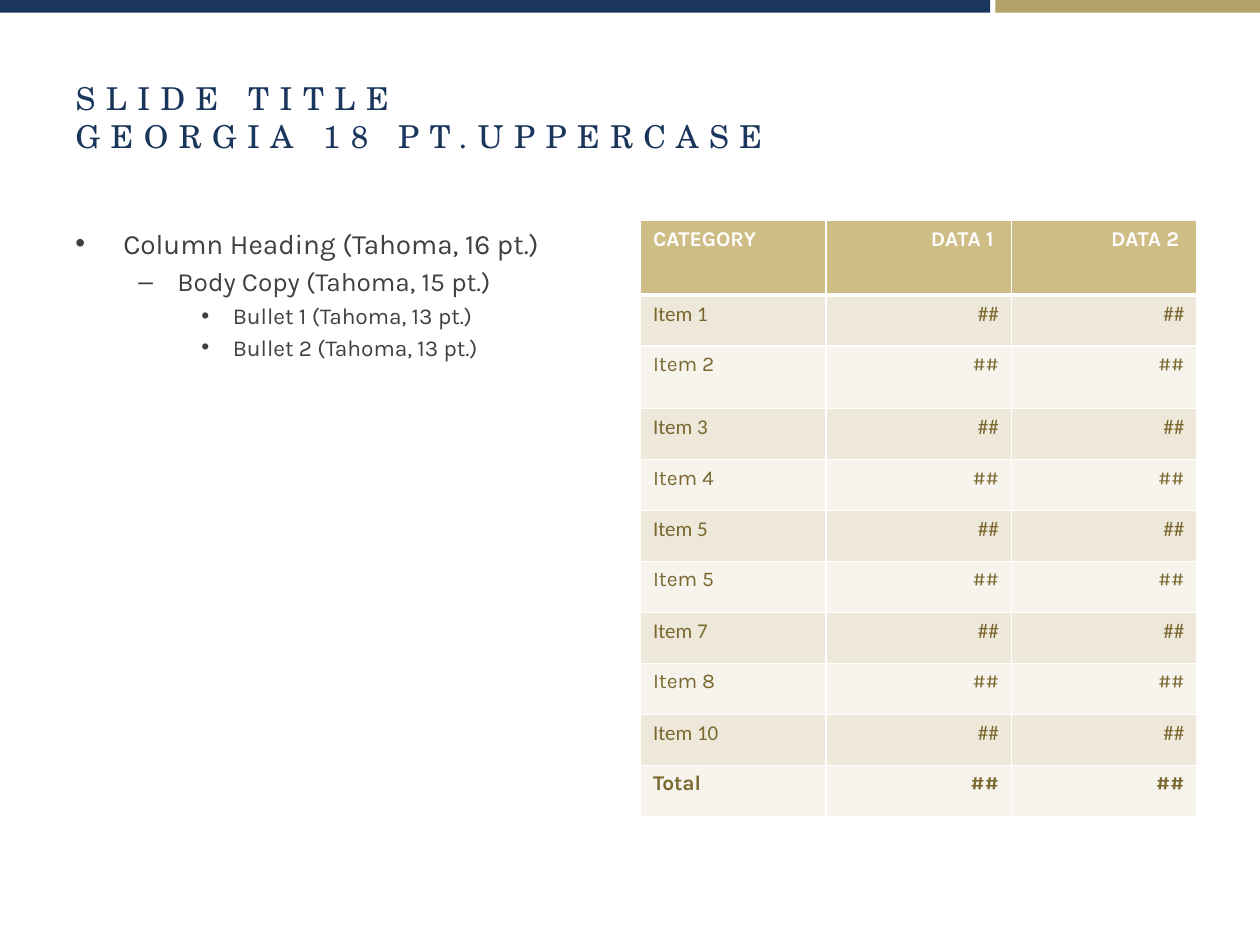
from pptx import Presentation
from pptx.dml.color import RGBColor
from pptx.enum.shapes import MSO_SHAPE as Shape
from pptx.enum.text import MSO_ANCHOR as Anchor, MSO_AUTO_SIZE as Fit, PP_ALIGN as Align
from pptx.oxml.ns import qn
from pptx.util import Inches, Pt
from lxml.etree import SubElement as Sub

NAVY, GOLD, WHITE = "1A365D", "B3A369", "FFFFFF"
GRAY, BROWN = "404040", "7A6830"
SAND, BANDS = "CFBD86", ("EDE8D9", "F6F4ED")
SANS, PLAIN, SERIF = "Karla", "Calibri", "TeX Gyre Schola"


def tint(code):
    return RGBColor.from_string(code)


class Deck:
    def __init__(self):
        self.file = Presentation()
        self.file.slide_width, self.file.slide_height = Inches(10), Inches(7.5)
        self.slide = self.file.slides.add_slide(self.file.slide_layouts[5])

    def wide(self, share):
        return round(self.file.slide_width * share / 100)

    def high(self, share):
        return round(self.file.slide_height * share / 100)

    def box(self, x, y, w, h):
        return self.wide(x), self.high(y), self.wide(w), self.high(h)

    def style(self, para, size, color, face=SANS, bold=False):
        for run in para.runs:
            font = run.font
            font.size, font.name, font.bold = Pt(size), face, bold
            font.color.rgb = tint(color)

    def bar(self, x, w, color):
        shape = self.slide.shapes.add_shape(Shape.RECTANGLE, *self.box(x, 0, w, 1.33))
        shape.shadow.inherit = False
        shape.fill.solid()
        shape.fill.fore_color.rgb = tint(color)
        shape.line.fill.background()

    def title(self, text, *area):
        shape = self.slide.shapes.title
        shape.left, shape.top, shape.width, shape.height = self.box(*area)
        frame = shape.text_frame
        frame.text = text
        frame.auto_size, frame.vertical_anchor = Fit.NONE, Anchor.MIDDLE
        para = frame.paragraphs[0]
        para.alignment = Align.LEFT
        self.style(para, 18, NAVY, SERIF)
        for run in para.runs:
            run.font._element.set("spc", "600")

    def bullets(self, items, *area):
        frame = self.slide.shapes.add_textbox(*self.box(*area)).text_frame
        frame.word_wrap = True
        frame.text = "\n".join(text for text, *rest in items)
        looks = {0: (0.38, 0.38, "•", 16), 1: (0.81, 0.31, "–", 15), 2: (1.25, 0.25, "•", 13)}
        for i, (para, (text, level)) in enumerate(zip(frame.paragraphs, items)):
            left, hang, mark, size = looks[level]
            para.level = level
            props = para._p.get_or_add_pPr()
            props.set("marL", str(Inches(left)))
            props.set("indent", str(-Inches(hang)))
            Sub(props, qn("a:buFont"), typeface="Arial")
            Sub(props, qn("a:buChar"), char=mark)
            if i:
                para.space_before = Pt(size * 0.2)
            self.style(para, size, GRAY)

    def edge(self, cell, head):
        props = cell._tc.get_or_add_tcPr()
        for side in "LRTB":
            size = Pt(3 if head and side == "B" else 1)
            line = Sub(props, qn("a:ln" + side), w=str(size))
            Sub(Sub(line, qn("a:solidFill")), qn("a:srgbClr"), val=WHITE)

    def table(self, rows, highs, *area):
        cols = len(rows[0])
        grid = self.slide.shapes.add_table(len(rows), cols, *self.box(*area)).table
        grid.horz_banding = grid.first_row = False
        last = len(rows) - 1
        for r, row in enumerate(rows):
            grid.rows[r].height = self.high(highs[r])
            head = r == 0
            fill = SAND if head else BANDS[(r - 1) % 2]
            color = WHITE if head else BROWN
            face = PLAIN if r % 2 else SANS
            for c, text in enumerate(row):
                cell = grid.cell(r, c)
                cell.text = text
                self.edge(cell, head)
                cell.fill.solid()
                cell.fill.fore_color.rgb = tint(fill)
                para = cell.text_frame.paragraphs[0]
                para.alignment = Align.RIGHT if c else Align.LEFT
                self.style(para, 12, color, face, r in (0, last))


def main():
    deck = Deck()
    deck.bar(0, 78.6, "1B365D")
    deck.bar(79, 21, GOLD)
    deck.title("SLIDE TITLE\vGEORGIA 18 PT.UPPERCASE", 5, 4, 90, 16.67)
    deck.bullets([
        ("Column Heading (Tahoma, 16 pt.)", 0),
        ("Body Copy (Tahoma, 15 pt.)", 1),
        ("Bullet 1 (Tahoma, 13 pt.)", 2),
        ("Bullet 2 (Tahoma, 13 pt.)", 2),
    ], 5, 23.33, 44.2, 66)
    names = [f"Item {n}" for n in (1, 2, 3, 4, 5, 5, 7, 8, 10)] + ["Total"]
    rows = [("CATEGORY", "DATA 1 ", "DATA 2 ")] + [(name, "##", "##") for name in names]
    highs = [7.9, 5.4, 6.6] + [5.4] * 8
    deck.table(rows, highs, 50.83, 23.33, 44.17, sum(highs))
    deck.file.save("out.pptx")


if __name__ == "__main__":
    main()
